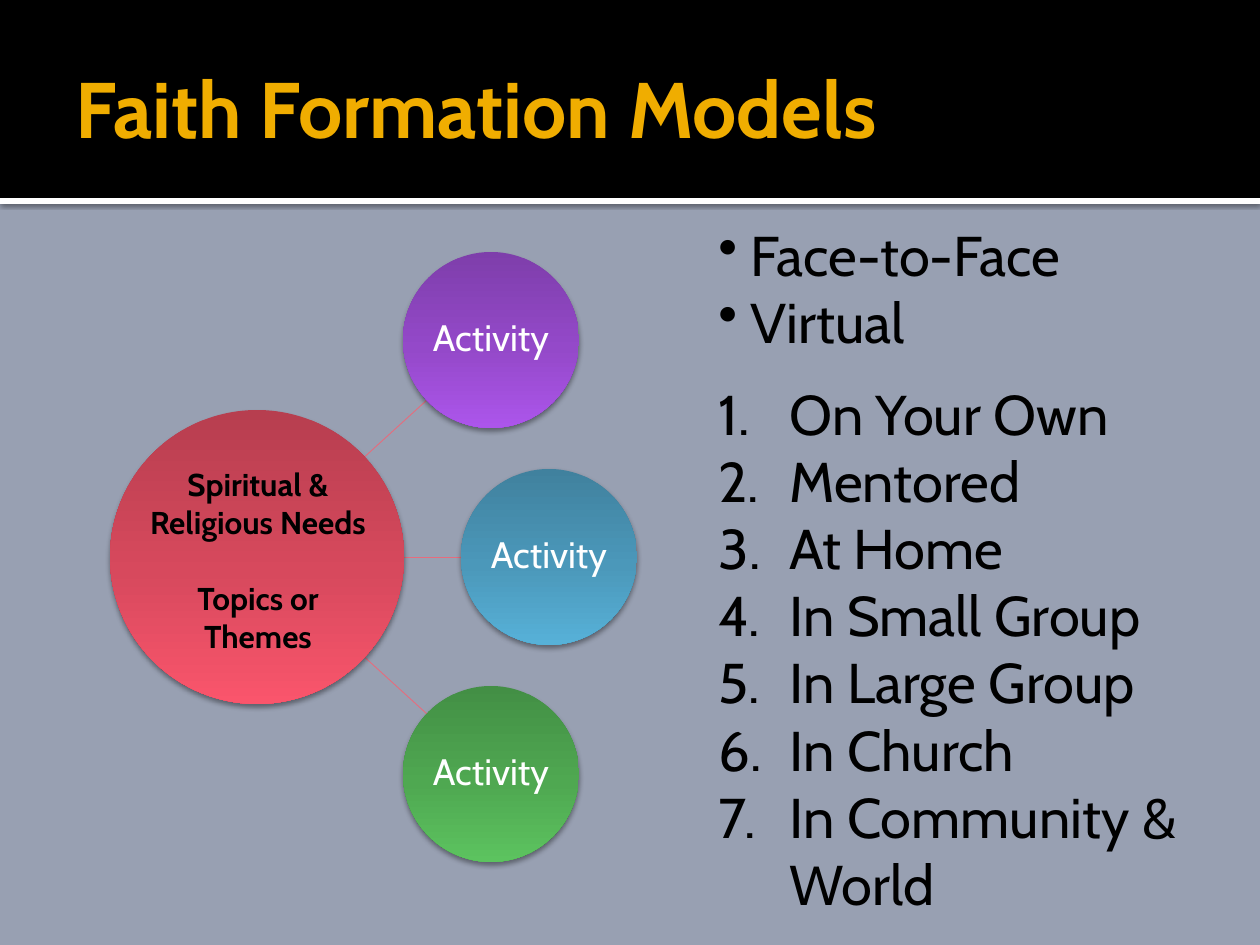
from lxml import etree
from pptx import Presentation
from pptx import util as u
from pptx.dml.color import RGBColor
from pptx.enum import shapes, text
from pptx.oxml.ns import qn

PX = 914400 / 126  # EMU in one px
FONT = "Cabin"
BLACK = RGBColor(0, 0, 0)
WHITE = RGBColor(255, 255, 255)
SLATE = RGBColor(0x98, 0xA0, 0xB2)
GOLD = RGBColor(0xF0, 0xAD, 0x00)
ROSE = RGBColor(0xE6, 0x6C, 0x7D)


def shades(*codes):
    return [RGBColor.from_string(c) for c in codes]


# Gradient shades, from the bottom of a circle to its top
RED = shades("B73E4F", "D7495D", "FA556C")
PURPLE = shades("7E3EAB", "9449C9", "AC55EB")
BLUE = shades("40819E", "4B98BA", "57B1D8")
GREEN = shades("438F45", "4FA851", "5CC35F")


def px(*values):
    return [u.Emu(round(v * PX)) for v in values]


def add_xml(parent, tag, **attrs):
    return etree.SubElement(parent, qn(tag), {k: str(v) for k, v in attrs.items()})


def add_color(parent, color, alpha=None):
    clr = add_xml(parent, "a:srgbClr", val=color)
    if alpha:
        add_xml(clr, "a:alpha", val=alpha * 1000)


def add_shape(s, kind, box, fill=None):
    sp = s.shapes.add_shape(kind, *px(*box))
    sp.shadow.inherit = False
    sp.line.fill.background()
    if fill is not None:
        sp.fill.solid()
        sp.fill.fore_color.rgb = fill
    return sp


def add_shadow(sp, alpha, blur, dist):
    """Drop a black shadow straight down; blur and dist are points."""
    effects = sp._element.spPr.find(qn("a:effectLst"))
    shadow = add_xml(effects, "a:outerShdw", blurRad=u.Pt(blur), dist=u.Pt(dist),
                     dir=5400000, rotWithShape=0)
    add_color(shadow, BLACK, alpha)


def add_circle(s, left, top, size, colors):
    sp = add_shape(s, shapes.MSO_SHAPE.OVAL, (left, top, size, size))
    sp.fill.gradient()
    sp.fill.gradient_angle = 270
    stops = sp._element.spPr.find(qn("a:gradFill")).find(qn("a:gsLst"))
    for stop in list(stops):
        stops.remove(stop)
    for pos, color in zip((0, 55, 100), colors):
        add_color(add_xml(stops, "a:gs", pos=pos * 1000), color)
    add_shadow(sp, 38, 3.1, 2)
    return sp


def add_box(s, box, anchor=text.MSO_ANCHOR.TOP):
    tf = s.shapes.add_textbox(*px(*box)).text_frame
    tf.word_wrap = True
    tf.vertical_anchor = anchor
    return tf


def add_text(tf, content, size=18, color=BLACK, bold=False, align=text.PP_ALIGN.LEFT,
             before=0, spacing=None, bullet=None, indent=0):
    """Write one paragraph; bullet is a (tag, attributes) pair."""
    p = tf.paragraphs[0]
    if p.runs:
        p = tf.add_paragraph()
    if bullet:
        pPr = p._p.get_or_add_pPr()
        hang = px(indent)[0]
        pPr.set("marL", str(hang))
        pPr.set("indent", str(-hang))
        tag, attrs = bullet
        add_xml(pPr, tag, **attrs)
    p.alignment = align
    if before:
        p.space_before = u.Pt(before)
    if spacing:
        p.line_spacing = spacing
    r = p.add_run()
    r.text = content
    r.font.name = FONT
    r.font.size = u.Pt(size)
    r.font.bold = bold
    r.font.color.rgb = color


def add_header(s, left, top, width, height):
    rect = shapes.MSO_SHAPE.RECTANGLE
    rule = add_shape(s, rect, (left, top + height, width, 6), WHITE)
    add_shadow(rule, 60, 2.5, 0.8)
    add_shape(s, rect, (left, top, width, height), BLACK)
    tf = add_box(s, (left + 63, top + 21, width - 126, 173), text.MSO_ANCHOR.MIDDLE)
    tf.margin_right = u.Inches(0.05)
    add_text(tf, "Faith Formation Models", size=45, color=GOLD, bold=True)


def add_diagram(s, left, top):
    hub, small, step = 294, 176, 217
    middle = top + step + small // 2

    # Spokes, which start beneath the hub
    for x, start, end in ((317, -95, -157), (351, 0, 0), (317, 95, 157)):
        line = s.shapes.add_connector(
            shapes.MSO_CONNECTOR.STRAIGHT,
            *px(left + 249, middle + start, left + x, middle + end))
        line.line.color.rgb = ROSE
        line.line.width = u.Pt(0.5)
        add_xml(line._element.spPr, "a:effectLst")

    add_circle(s, left, middle - hub // 2, hub, RED)

    # Activity circles
    for i, (x, colors) in enumerate(((293, PURPLE), (351, BLUE), (293, GREEN))):
        tf = add_circle(s, left + x, top + i * step, small, colors).text_frame
        tf.word_wrap = True
        tf.vertical_anchor = text.MSO_ANCHOR.MIDDLE
        tf.margin_left = tf.margin_right = u.Inches(0.01)
        tf.margin_top = tf.margin_bottom = u.Inches(0.01)
        add_text(tf, "Activity", size=21, color=WHITE,
                 align=text.PP_ALIGN.CENTER, spacing=0.9)

    # Hub label
    tf = add_box(s, (left + 22, middle - 98, 252, 204))
    for content, before in (("Spiritual & Religious Needs", 0), ("Topics or Themes", 22)):
        add_text(tf, content, bold=True, align=text.PP_ALIGN.CENTER, before=before)


def add_models(s, *box):
    tf = add_box(s, box)
    dot = ("a:buChar", {"char": "•"})
    number = ("a:buAutoNum", {"type": "arabicPeriod"})
    for content in ("Face-to-Face", "Virtual"):
        add_text(tf, content, size=32, bullet=dot, indent=32)
    models = ("On Your Own", "Mentored", "At Home", "In Small Group",
              "In Large Group", "In Church", "In Community & World")
    for i, content in enumerate(models):
        add_text(tf, content, size=32, bullet=number, indent=71,
                 before=0 if i else 14)


def main():
    prs = Presentation()
    prs.slide_width, prs.slide_height = px(1260, 945)
    s = prs.slides.add_slide(prs.slide_layouts[6])
    s.background.fill.solid()
    s.background.fill.fore_color.rgb = SLATE
    add_header(s, 0, 0, 1260, 198)
    add_diagram(s, 110, 252)
    add_models(s, 706, 214, 513, 717)
    prs.save("out.pptx")


if __name__ == "__main__":
    main()
